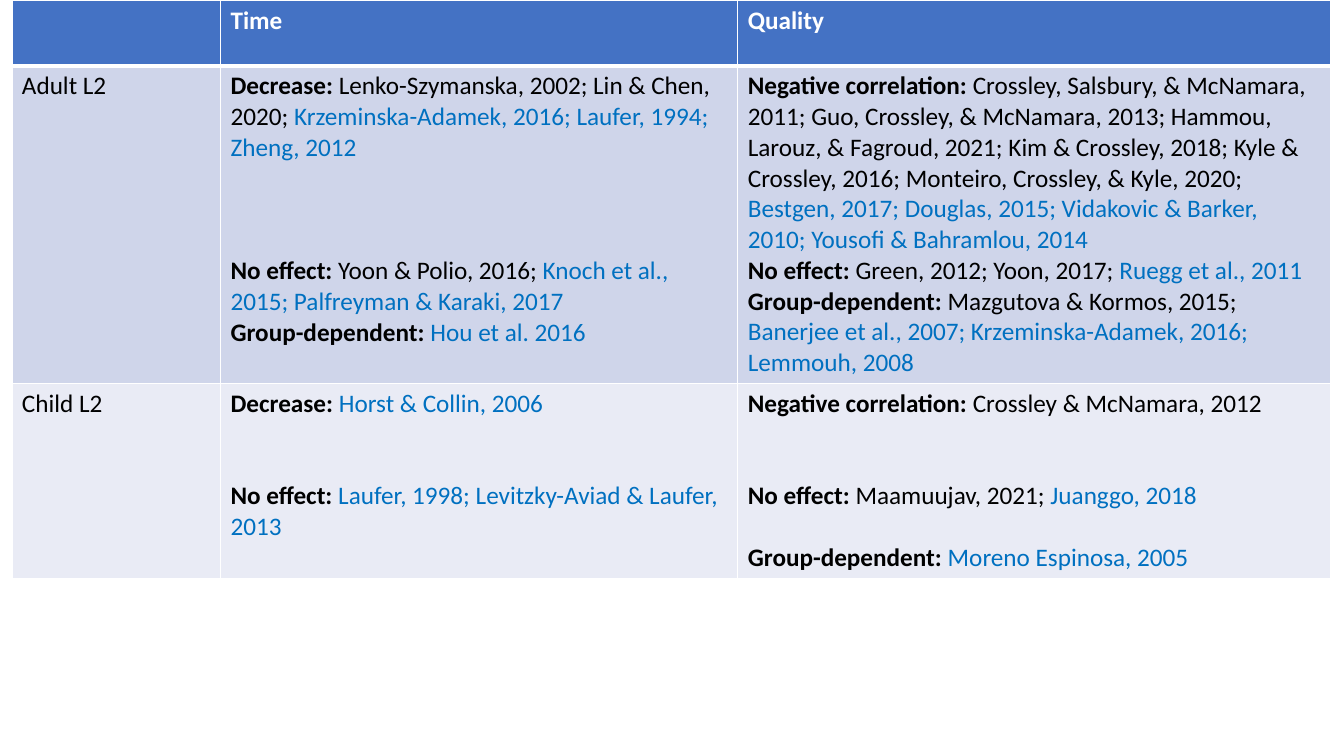
from dataclasses import dataclass

from lxml.etree import SubElement
from pptx import Presentation
from pptx.dml.color import RGBColor
from pptx.oxml.ns import qn
from pptx.table import _Cell
from pptx.util import Pt

COLORS = {
    "header": "4472C4",
    "adult": "CFD5EA",
    "child": "E9EBF5",
    "white": "FFFFFF",
    "black": "000000",
    "blue": "0070C0",
}
FONT = "Calibri"
TEXT_SIZE = 18
LINE_HEIGHT = 22
COLUMN_WIDTHS = (149, 369.5, 423.5)
ROW_HEIGHTS = (47, 218, 114.5)


@dataclass
class Finding:
    label: str
    black_studies: str = ""
    blue_studies: str = ""
    lines_before: int = 0


@dataclass
class Group:
    name: str
    fill: str
    time: list[Finding]
    quality: list[Finding]


GROUPS = [
    Group(
        "Adult L2",
        "adult",
        time=[
            Finding("Decrease: ", "Lenko-Szymanska, 2002; Lin & Chen, 2020; ",
                    "Krzeminska-Adamek, 2016; Laufer, 1994; Zheng, 2012"),
            Finding("No effect: ", "Yoon & Polio, 2016; ",
                    "Knoch et al., 2015; Palfreyman & Karaki, 2017", lines_before=3),
            Finding("Group-dependent: ", blue_studies="Hou et al. 2016"),
        ],
        quality=[
            Finding("Negative correlation: ",
                    "Crossley, Salsbury, & McNamara, 2011; Guo, Crossley, & McNamara, 2013; "
                    "Hammou, Larouz, & Fagroud, 2021; Kim & Crossley, 2018; "
                    "Kyle & Crossley, 2016; Monteiro, Crossley, & Kyle, 2020; ",
                    "Bestgen, 2017; Douglas, 2015; Vidakovic & Barker, 2010; "
                    "Yousofi & Bahramlou, 2014"),
            Finding("No effect: ", "Green, 2012; Yoon, 2017; ", "Ruegg et al., 2011"),
            Finding("Group-dependent: ", "Mazgutova & Kormos, 2015; ",
                    "Banerjee et al., 2007; Krzeminska-Adamek, 2016; Lemmouh, 2008"),
        ],
    ),
    Group(
        "Child L2",
        "child",
        time=[
            Finding("Decrease: ", blue_studies="Horst & Collin, 2006"),
            Finding("No effect: ", blue_studies="Laufer, 1998; Levitzky-Aviad & Laufer, 2013",
                    lines_before=2),
        ],
        quality=[
            Finding("Negative correlation: ", "Crossley & McNamara, 2012"),
            Finding("No effect: ", "Maamuujav, 2021; ", "Juanggo, 2018", lines_before=2),
            Finding("Group-dependent: ", blue_studies="Moreno Espinosa, 2005", lines_before=1),
        ],
    ),
]


def add_span(para, text: str, *, color: str = "black", bold: bool = False) -> None:
    span = para.add_run()
    span.text = text
    span.font.name = FONT
    span.font.size = Pt(TEXT_SIZE)
    span.font.bold = bold
    span.font.color.rgb = RGBColor.from_string(COLORS[color])


def write_findings(cell: _Cell, findings: list[Finding]) -> None:
    frame = cell.text_frame
    for index, finding in enumerate(findings):
        para = frame.add_paragraph() if index else frame.paragraphs[0]
        para.space_before = Pt(finding.lines_before * LINE_HEIGHT)
        add_span(para, finding.label, bold=True)
        if finding.black_studies:
            add_span(para, finding.black_studies)
        if finding.blue_studies:
            add_span(para, finding.blue_studies, color="blue")


def style_cell(cell: _Cell, fill: str, *, top: float = 1, bottom: float = 1) -> None:
    """Give the cell white borders and a solid fill; borders come first in the XML."""
    properties = cell._tc.get_or_add_tcPr()
    for side, width in (("L", 1), ("R", 1), ("T", top), ("B", bottom)):
        line = SubElement(properties, qn(f"a:ln{side}"), w=str(Pt(width)))
        solid = SubElement(line, qn("a:solidFill"))
        SubElement(solid, qn("a:srgbClr"), val=COLORS["white"])
    cell.fill.solid()
    cell.fill.fore_color.rgb = RGBColor.from_string(COLORS[fill])


def add_review_table(page) -> None:
    table = page.shapes.add_table(
        len(ROW_HEIGHTS), len(COLUMN_WIDTHS),
        Pt(8.5), Pt(0), Pt(sum(COLUMN_WIDTHS)), Pt(sum(ROW_HEIGHTS)),
    ).table
    for column, width in zip(table.columns, COLUMN_WIDTHS):
        column.width = Pt(width)
    for row, height in zip(table.rows, ROW_HEIGHTS):
        row.height = Pt(height)

    for cell, heading in zip(table.rows[0].cells, ("", "Time", "Quality")):
        style_cell(cell, "header", bottom=3)
        if heading:
            add_span(cell.text_frame.paragraphs[0], heading, color="white", bold=True)

    for index, group in enumerate(GROUPS, start=1):
        name_cell, time_cell, quality_cell = table.rows[index].cells
        for cell in (name_cell, time_cell, quality_cell):
            style_cell(cell, group.fill, top=3 if index == 1 else 1)
        add_span(name_cell.text_frame.paragraphs[0], group.name)
        write_findings(time_cell, group.time)
        write_findings(quality_cell, group.quality)


def main() -> None:
    deck = Presentation()
    deck.slide_width, deck.slide_height = Pt(960), Pt(540)
    page = deck.slides.add_slide(deck.slide_layouts[6])
    add_review_table(page)
    deck.save("out.pptx")


if __name__ == "__main__":
    main()
